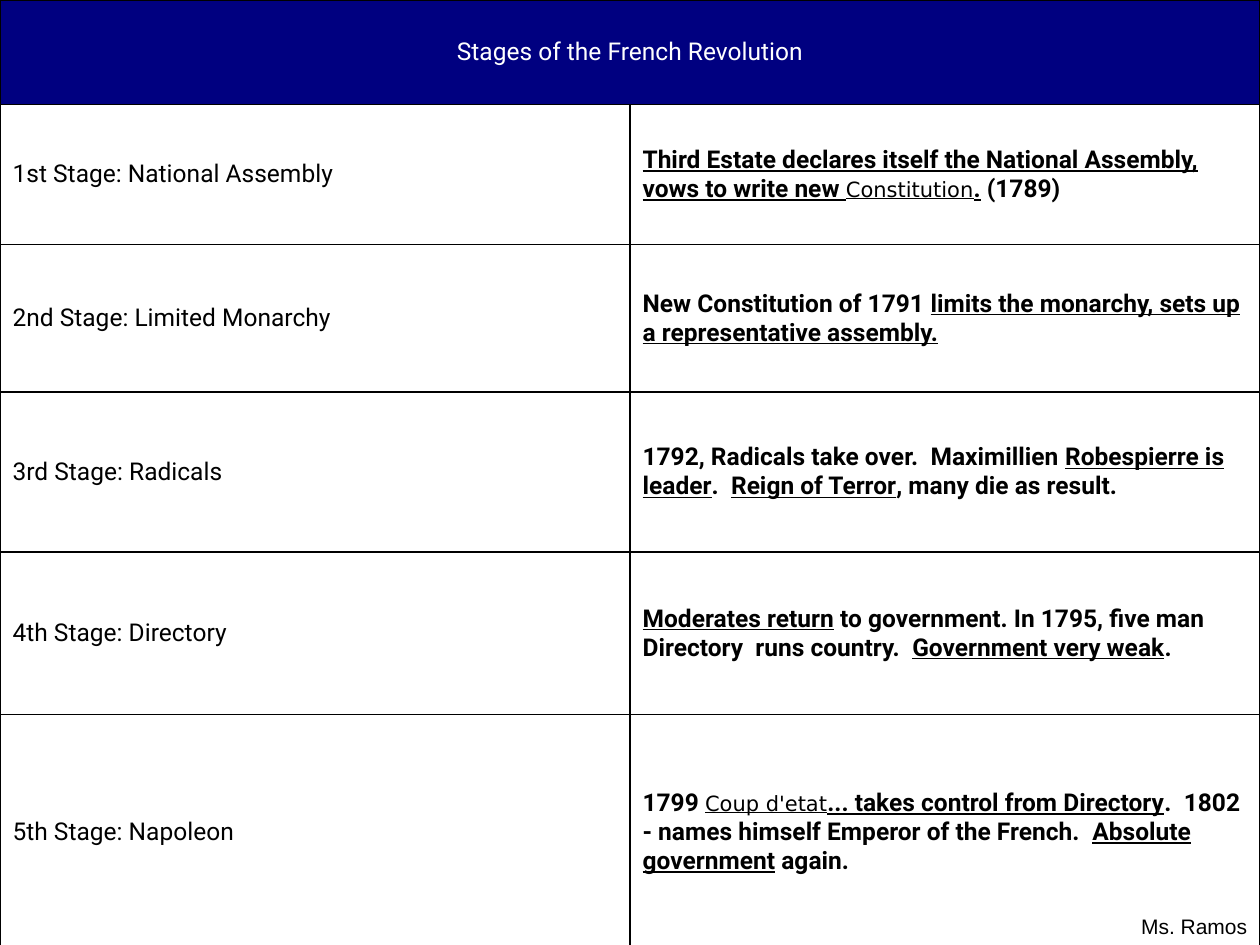
from lxml import etree
from pptx import Presentation
from pptx.dml.color import RGBColor
from pptx.enum import text
from pptx.oxml.ns import qn
from pptx.util import Pt

THEME = {
    "ink": RGBColor(0, 0, 0),
    "white": RGBColor(255, 255, 255),
    "navy": RGBColor(0, 0, 128),
    "line": "000000",
    "main": {"name": "Roboto", "size": Pt(14)},
    "term": {"name": "DejaVu Sans", "size": Pt(12), "underline": True},
    "sign": {"name": "Arial", "size": Pt(12)},
}
STYLES = {
    "plain": THEME["main"],
    "bold": {**THEME["main"], "bold": True},
    "under": {**THEME["main"], "bold": True, "underline": True},
    "term": THEME["term"],
    "sign": THEME["sign"],
}
TITLE = "Stages of the French Revolution"
STAGES = [
    ("1st Stage: National Assembly", [
        ("under", "Third Estate declares itself the National Assembly, vows to write new "),
        ("term", "Constitution"), ("under", "."), ("bold", " (1789)")]),
    ("2nd Stage: Limited Monarchy", [
        ("bold", "New Constitution of 1791 "),
        ("under", "limits the monarchy, sets up a representative assembly.")]),
    ("3rd Stage: Radicals", [
        ("bold", "1792, Radicals take over.  Maximillien "),
        ("under", "Robespierre is leader"), ("bold", ".  "),
        ("under", "Reign of Terror"), ("bold", ", many die as result.")]),
    ("4th Stage: Directory", [
        ("under", "Moderates return"),
        ("bold", " to government. In 1795, five man Directory  runs country.  "),
        ("under", "Government very weak"), ("bold", ".")]),
    ("5th Stage: Napoleon", [
        ("bold", "1799 "), ("term", "Coup d'etat"),
        ("under", "... takes control from Directory"),
        ("bold", ".  1802 - names himself Emperor of the French.  "),
        ("under", "Absolute government"), ("bold", " again.")]),
]
HEIGHTS = [59.8, 80, 84.2, 91.4, 92.9, 134.6]


def write(frame, runs, color):
    """Add (style, words) runs to the first paragraph of a text frame."""
    para = frame.paragraphs[0]
    for style, words in runs:
        run = para.add_run()
        run.text = words
        for key, value in STYLES[style].items():
            setattr(run.font, key, value)
        run.font.color.rgb = color
    return para


def dress(cell, fill):
    """Give a cell thin black borders, a fill and middle anchoring."""
    props = cell._tc.get_or_add_tcPr()
    for side in ("lnL", "lnR", "lnT", "lnB"):
        line = etree.SubElement(props, qn("a:" + side), w=str(Pt(1)))
        solid = etree.SubElement(line, qn("a:solidFill"))
        etree.SubElement(solid, qn("a:srgbClr"), val=THEME["line"])
    cell.fill.solid()
    cell.fill.fore_color.rgb = fill
    cell.vertical_anchor = text.MSO_ANCHOR.MIDDLE


prs = Presentation()
prs.slide_width, prs.slide_height = Pt(720), Pt(540)
slide = prs.slides.add_slide(prs.slide_layouts[6])

# Table of stages
table = slide.shapes.add_table(
    len(HEIGHTS), 2, 0, 0, Pt(720), Pt(sum(HEIGHTS))).table
for col in table.columns:
    col.width = Pt(360)
for i, (row, height) in enumerate(zip(table.rows, HEIGHTS)):
    row.height = Pt(height)
    for cell in row.cells:
        dress(cell, THEME["white"] if i else THEME["navy"])

head = table.cell(0, 0)
head.merge(table.cell(0, 1))
para = write(head.text_frame, [("plain", TITLE)], THEME["white"])
para.alignment = text.PP_ALIGN.CENTER

for i, (stage, events) in enumerate(STAGES, 1):
    write(table.cell(i, 0).text_frame, [("plain", stage)], THEME["ink"])
    write(table.cell(i, 1).text_frame, events, THEME["ink"])

# Signature
box = slide.shapes.add_textbox(Pt(645), Pt(518.4), Pt(75.6), Pt(21.6))
box.text_frame.word_wrap = False
box.text_frame.auto_size = text.MSO_AUTO_SIZE.SHAPE_TO_FIT_TEXT
write(box.text_frame, [("sign", "Ms. Ramos")], THEME["ink"])

prs.save("out.pptx")
